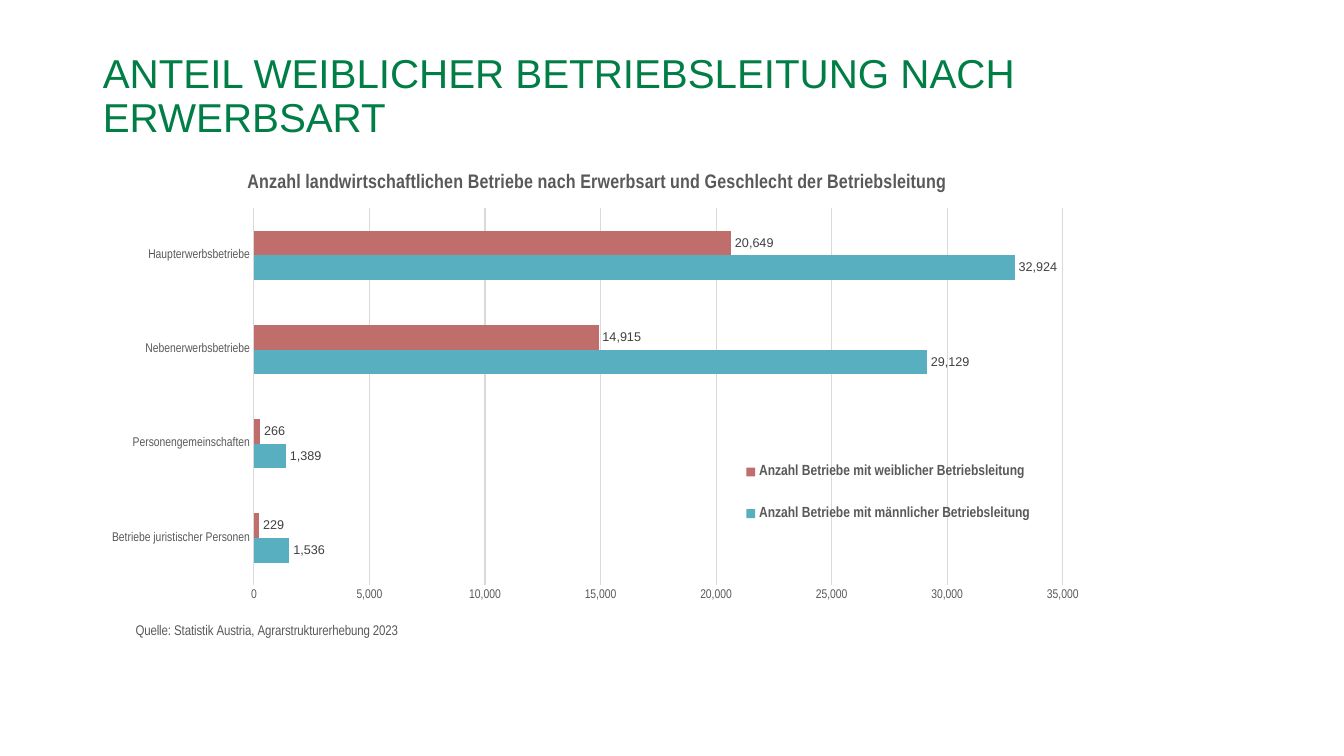
import pptx
import pptx.chart.data
import pptx.dml.color
import pptx.enum.chart
import pptx.enum.text
import pptx.oxml
import pptx.oxml.ns
import pptx.util

Inches = pptx.util.Inches
TEXT_COLOR = "595959"
GRID_COLOR = "D9D9D9"
NARROW = "Arial Narrow"
CATEGORIES = [
    "Betriebe juristischer Personen",
    "Personengemeinschaften",
    "Nebenerwerbsbetriebe",
    "Haupterwerbsbetriebe",
]
SERIES = [
    ("Anzahl Betriebe mit männlicher Betriebsleitung", (1536, 1389, 29129, 32924), "58AFC0"),
    ("Anzahl Betriebe mit weiblicher Betriebsleitung", (229, 266, 14915, 20649), "C06E6C"),
]


def color(value):
    return pptx.dml.color.RGBColor.from_string(value)


def format_font(font, size, value, name, bold=False):
    font.size = pptx.util.Pt(size)
    font.color.rgb = color(value)
    font.name = name
    font.bold = bold


def format_line(line, value):
    line.color.rgb = color(value)
    line.width = pptx.util.Pt(0.75)


def set_layout(element, index, left, top, width=None, height=None, inner=False):
    for layout in element.findall(pptx.oxml.ns.qn("c:layout")):
        element.remove(layout)
    parts = ['<c:layoutTarget val="inner"/>'] if inner else []
    parts += ['<c:xMode val="edge"/>', '<c:yMode val="edge"/>']
    lengths = {"x": left, "y": top, "w": width, "h": height}
    parts += [f'<c:{key} val="{value}"/>' for key, value in lengths.items() if value is not None]
    namespace = pptx.oxml.ns.nsdecls("c")
    layout = pptx.oxml.parse_xml(
        f"<c:layout {namespace}><c:manualLayout>{''.join(parts)}</c:manualLayout></c:layout>"
    )
    element.insert(index, layout)


def add_chart_text(title, text, size, bold, left, top):
    title.text_frame.text = text
    format_font(title.text_frame.paragraphs[0].runs[0].font, size, TEXT_COLOR, NARROW, bold)
    set_layout(title.element, 1, left, top)


def place_title(slide, left, top, width, height):
    title = slide.shapes.title
    title.left, title.top, title.width, title.height = left, top, width, height
    frame = title.text_frame
    frame.text = "ANTEIL WEIBLICHER BETRIEBSLEITUNG NACH ERWERBSART"
    frame.word_wrap = True
    frame.auto_size = pptx.enum.text.MSO_AUTO_SIZE.NONE
    frame.vertical_anchor = pptx.enum.text.MSO_ANCHOR.MIDDLE
    paragraph = frame.paragraphs[0]
    paragraph.alignment = pptx.enum.text.PP_ALIGN.LEFT
    paragraph.line_spacing = 0.9
    format_font(paragraph.runs[0].font, 28.8, "007E46", "Arial")


def format_axes(chart):
    for axis in (chart.category_axis, chart.value_axis):
        axis.major_tick_mark = pptx.enum.chart.XL_TICK_MARK.NONE
        axis.minor_tick_mark = pptx.enum.chart.XL_TICK_MARK.NONE
        format_font(axis.tick_labels.font, 9, TEXT_COLOR, NARROW)
    format_line(chart.category_axis.format.line, GRID_COLOR)
    values = chart.value_axis
    values.minimum_scale = 0
    values.maximum_scale = 35000
    values.major_unit = 5000
    values.tick_labels.number_format = "#,##0"
    values.tick_labels.number_format_is_linked = False
    values.format.line.fill.background()
    values.has_major_gridlines = True
    format_line(values.major_gridlines.format.line, GRID_COLOR)
    source = "Quelle: Statistik Austria, Agrarstrukturerhebung 2023"
    add_chart_text(values.axis_title, source, 10, False, 0.04, 0.89)


def format_bars(plot):
    plot.gap_width = 182
    plot.overlap = 0
    plot.vary_by_categories = False
    for series, (name, values, fill) in zip(plot.series, SERIES):
        series.format.fill.solid()
        series.format.fill.fore_color.rgb = color(fill)
        labels = series.data_labels
        labels.show_value = True
        labels.position = pptx.enum.chart.XL_LABEL_POSITION.OUTSIDE_END
        labels.number_format = "#,##0"
        labels.number_format_is_linked = False
        format_font(labels.font, 9, "404040", "Arial")


def format_legend(chart):
    chart.has_legend = True
    chart.legend.position = pptx.enum.chart.XL_LEGEND_POSITION.BOTTOM
    chart.legend.include_in_layout = True
    format_font(chart.legend.font, 10.5, TEXT_COLOR, NARROW, True)
    element = chart.element.find(".//" + pptx.oxml.ns.qn("c:legend"))
    set_layout(element, 1, 0.64, 0.54, 0.3, 0.21)


def place_chart(slide, left, top, width, height):
    data = pptx.chart.data.CategoryChartData(number_format="#,##0")
    data.categories = CATEGORIES
    for name, values, fill in SERIES:
        data.add_series(name, values)
    chart = slide.shapes.add_chart(
        pptx.enum.chart.XL_CHART_TYPE.BAR_CLUSTERED, left, top, width, height, data
    ).chart
    format_font(chart.font, 10, "000000", "Arial")
    heading = "Anzahl landwirtschaftlichen Betriebe nach Erwerbsart und Geschlecht der Betriebsleitung"
    add_chart_text(chart.chart_title, heading, 14, True, 0.15, 0.03)
    format_axes(chart)
    format_bars(chart.plots[0])
    format_legend(chart)
    plot_area = chart.element.find(".//" + pptx.oxml.ns.qn("c:plotArea"))
    set_layout(plot_area, 0, 0.16, 0.106, 0.803, 0.714, inner=True)


def main():
    presentation = pptx.Presentation()
    presentation.slide_width = Inches(13.33)
    presentation.slide_height = Inches(7.5)
    slide = presentation.slides.add_slide(presentation.slide_layouts[5])
    left, width = Inches(0.92), Inches(9.99)
    place_title(slide, left, Inches(0.72), width, Inches(0.49))
    place_chart(slide, left, Inches(1.51), width, Inches(5.24))
    presentation.save("out.pptx")


if __name__ == "__main__":
    main()
